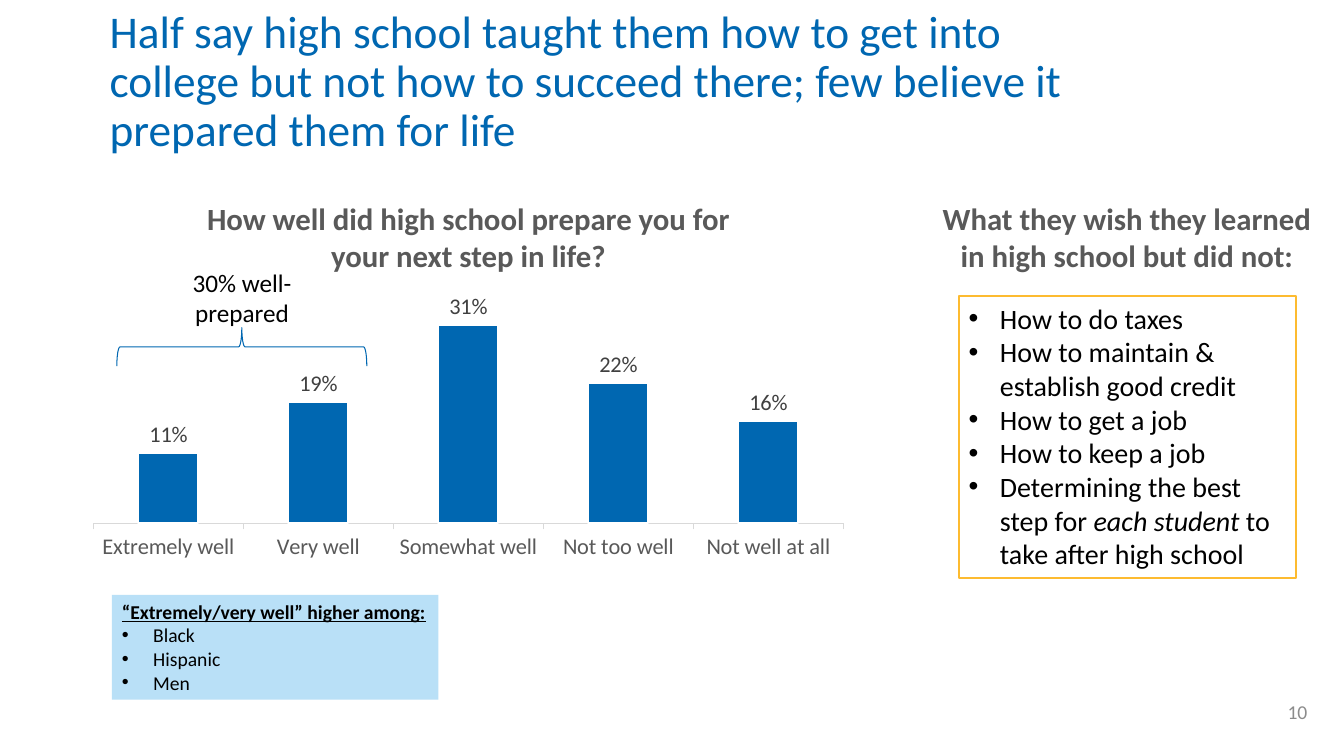
from lxml import etree
from pptx import Presentation
from pptx.chart.data import CategoryChartData
from pptx.dml.color import RGBColor
from pptx.enum.chart import XL_CHART_TYPE, XL_LABEL_POSITION, XL_TICK_MARK
from pptx.enum.shapes import MSO_SHAPE
from pptx.enum.text import MSO_ANCHOR, MSO_AUTO_SIZE, PP_ALIGN
from pptx.oxml.ns import qn
from pptx.util import Cm, Pt

LEFT, MID, RIGHT = PP_ALIGN.LEFT, PP_ALIGN.CENTER, PP_ALIGN.RIGHT
RECT, BRACE = MSO_SHAPE.RECTANGLE, MSO_SHAPE.RIGHT_BRACE
BLUE = RGBColor(0x00, 0x67, 0xB1)
SKY = RGBColor(0xB9, 0xE0, 0xF7)
GOLD = RGBColor(0xFD, 0xBB, 0x30)
BLACK = RGBColor(0x00, 0x00, 0x00)
WHITE = RGBColor(0xFF, 0xFF, 0xFF)
DARK = RGBColor(0x40, 0x40, 0x40)
GREY = RGBColor(0x59, 0x59, 0x59)
PALE = RGBColor(0x8C, 0x8C, 0x8C)
RULE = RGBColor(0xD9, 0xD9, 0xD9)
FACE = "Calibri"


def style(font, size, color):
    font.name, font.size = FACE, Pt(size)
    font.color.rgb = color


def write(shape, lines, size, color, align=LEFT, anchor=MSO_ANCHOR.TOP):
    """Each line is (marks, runs); marks: b bold, u underline, * bullet.
    Every second run of a line is italic."""
    frame = shape.text_frame
    frame.word_wrap = True
    frame.auto_size = MSO_AUTO_SIZE.NONE
    frame.vertical_anchor = anchor
    for i, (marks, runs) in enumerate(lines):
        para = frame.add_paragraph() if i else frame.paragraphs[0]
        para.alignment = align
        if "*" in marks:
            props = para._p.get_or_add_pPr()
            props.set("marL", str(Cm(0.79)))
            props.set("indent", str(-Cm(0.79)))
            etree.SubElement(props, qn("a:buFont")).set("typeface", "Arial")
            etree.SubElement(props, qn("a:buChar")).set("char", "•")
        for j, text in enumerate(runs):
            run = para.add_run()
            run.text = text
            style(run.font, size, color)
            run.font.bold = "b" in marks
            run.font.underline = "u" in marks
            run.font.italic = j % 2 == 1


deck = Presentation()
deck.slide_width, deck.slide_height = Cm(33.87), Cm(19.05)
slide = deck.slides.add_slide(deck.slide_layouts[5])
shapes = slide.shapes

# Title
title = shapes.title
title.left, title.top, title.width, title.height = Cm(2.51), Cm(0.74), Cm(25.83), Cm(2.69)
write(title, [("", ["Half say high school taught them how to get into college but not "
                    "how to succeed there; few believe it prepared them for life"])],
      32.4, BLUE, anchor=MSO_ANCHOR.MIDDLE)
title.text_frame.paragraphs[0].line_spacing = 0.9

# Column chart
data = CategoryChartData(number_format="0%")
data.categories = ["Not well at all", "Not too well", "Somewhat well",
                   "Very well", "Extremely well"]
data.add_series("Series 1", [0.16, 0.22, 0.31, 0.19, 0.11])
chart = shapes.add_chart(XL_CHART_TYPE.COLUMN_CLUSTERED, Cm(1.96), Cm(6.88),
                         Cm(19.69), Cm(7.34), data).chart
chart.has_title = chart.has_legend = False
style(chart.font, 10, BLACK)

cats = chart.category_axis
cats.reverse_order = True
cats.has_major_gridlines = False
cats.major_tick_mark = XL_TICK_MARK.OUTSIDE
cats.format.line.color.rgb = RULE
cats.format.line.width = Pt(0.75)
style(cats.tick_labels.font, 16, GREY)

vals = chart.value_axis
vals.visible = vals.has_major_gridlines = False
vals.minimum_scale, vals.maximum_scale = 0, 0.35
vals.tick_labels.number_format = "0%"
vals.tick_labels.number_format_is_linked = False

plot = chart.plots[0]
plot.gap_width = 150
plot.vary_by_categories = False
bars = plot.series[0].format
bars.fill.solid()
bars.fill.fore_color.rgb = BLUE
bars.line.color.rgb = WHITE
bars.line.width = Pt(1.5)

plot.has_data_labels = True
labels = plot.data_labels
labels.show_value = True
labels.position = XL_LABEL_POSITION.OUTSIDE_END
labels.number_format, labels.number_format_is_linked = "0%", False
style(labels.font, 16, DARK)

# Fixed plot area inside the chart
area = chart._chartSpace.chart.plotArea
for old in area.findall(qn("c:layout")):
    area.remove(old)
layout = etree.Element(qn("c:layout"))
area.insert(0, layout)
manual = etree.SubElement(layout, qn("c:manualLayout"))
for tag, val in [("layoutTarget", "inner"), ("xMode", "edge"), ("yMode", "edge"),
                 ("x", "0.02"), ("y", "0.09"), ("w", "0.96"), ("h", "0.77")]:
    etree.SubElement(manual, qn("c:" + tag)).set("val", val)

# Boxes: gold list of wishes and blue note
wish = shapes.add_shape(RECT, Cm(24.16), Cm(7.47), Cm(8.51), Cm(7.09))
wish.fill.background()
wish.line.color.rgb = GOLD
wish.line.width = Pt(1.5)
write(wish, [("*", ["How to do taxes"]),
             ("*", ["How to maintain & establish good credit"]),
             ("*", ["How to get a job"]),
             ("*", ["How to keep a job"]),
             ("*", ["Determining the best step for ", "each student",
                    " to take after high school"])], 20, BLACK)

note = shapes.add_shape(RECT, Cm(2.82), Cm(14.99), Cm(8.23), Cm(2.64))
note.fill.solid()
note.fill.fore_color.rgb = SKY
note.line.fill.background()
write(note, [("bu", ["“Extremely/very well” higher among:"])]
      + [("*", [group]) for group in ("Black", "Hispanic", "Men")], 14, BLACK)

# Brace over the two best answers
brace = shapes.add_shape(BRACE, Cm(5.61), Cm(5.59), Cm(0.97), Cm(6.3))
brace.rotation = 270
brace.fill.background()
brace.line.color.rgb = BLUE
brace.line.width = Pt(0.75)
for shape in (wish, note, brace):
    shape.shadow.inherit = False

# Headings, brace label and page number
for x, y, w, h, marks, text, size, color, align, anchor in [
    (4.78, 4.9, 14.05, 2.13, "b",
     "How well did high school prepare you for your next step in life?",
     22, GREY, MID, MSO_ANCHOR.TOP),
    (23.32, 4.9, 10.16, 2.13, "b",
     "What they wish they learned in high school but did not:",
     22, GREY, MID, MSO_ANCHOR.TOP),
    (3.99, 6.6, 4.22, 1.8, "", "30% well-prepared", 18, BLACK, MID, MSO_ANCHOR.TOP),
    (30.71, 17.42, 2.49, 1.02, "", "10", 14, PALE, RIGHT, MSO_ANCHOR.MIDDLE),
]:
    box = shapes.add_textbox(Cm(x), Cm(y), Cm(w), Cm(h))
    write(box, [(marks, [text])], size, color, align, anchor)

deck.save("out.pptx")
